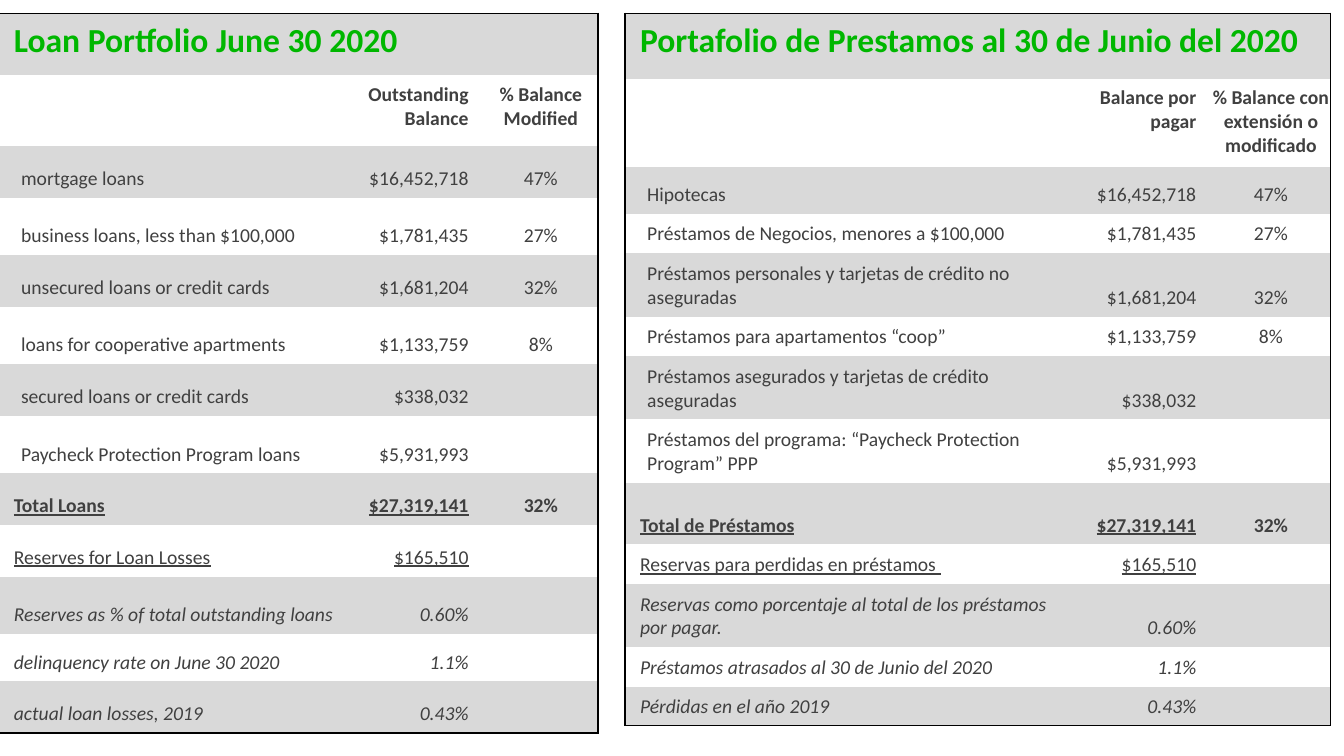
from lxml import etree
from pptx import Presentation
from pptx.dml.color import RGBColor
from pptx.enum.text import MSO_ANCHOR, PP_ALIGN
from pptx.oxml.ns import qn
from pptx.util import Cm, Pt

TOP, BOTTOM = MSO_ANCHOR.TOP, MSO_ANCHOR.BOTTOM
ALIGNS = (PP_ALIGN.LEFT, PP_ALIGN.RIGHT, PP_ALIGN.CENTER)
COLORS = {"title": "00B700", "text": "404040", "band": "D9D9D9", "line": "000000"}
FONT = "Calibri"
PLAIN = "{2D5ABB26-0587-4C30-8999-92F81FD0307C}"
LOANS = range(2, 8)
TOTAL, RESERVE = 8, 9

SUMS = ["$16,452,718", "$1,781,435", "$1,681,204", "$1,133,759", "$338,032",
        "$5,931,993", "$27,319,141", "$165,510", "0.60%", "1.1%", "0.43%"]
SHARES = ["47%", "27%", "32%", "8%", "", "", "32%", "", "", "", ""]

ENGLISH = {
    "box": (-0.03, 0.33),
    "cols": (8.59, 3.28, 3.23),
    "rows": (1.57, 1.78, 1.3, 1.45, 1.3, 1.45, 1.3, 1.45, 1.3, 1.3, 1.45, 1.19, 1.3),
    "title": "Loan Portfolio June 30 2020",
    "heads": ("", "Outstanding Balance", "% Balance Modified"),
    "labels": (
        "mortgage loans",
        "business loans, less than $100,000",
        "unsecured loans or credit cards",
        "loans for cooperative apartments",
        "secured loans or credit cards",
        "Paycheck Protection Program loans",
        "Total Loans",
        "Reserves for Loan Losses",
        "Reserves as % of total outstanding loans",
        "delinquency rate on June 30 2020",
        "actual loan losses, 2019",
    ),
}
SPANISH = {
    "box": (15.75, 0.33),
    "cols": (10.87, 3.56, 3.35),
    "rows": (1.65, 2.24, 1.17, 0.99, 1.6, 0.99, 1.6, 1.6, 1.55, 0.99, 1.6, 0.99, 0.99),
    "title": "Portafolio de Prestamos al 30 de Junio del 2020",
    "heads": ("", "Balance por pagar", "% Balance con extensión o modificado"),
    "labels": (
        "Hipotecas",
        "Préstamos de Negocios, menores a $100,000",
        "Préstamos personales y tarjetas de crédito no aseguradas",
        "Préstamos para apartamentos “coop”",
        "Préstamos asegurados y tarjetas de crédito aseguradas",
        "Préstamos del programa: “Paycheck Protection Program” PPP",
        "Total de Préstamos",
        "Reservas para perdidas en préstamos ",
        "Reservas como porcentaje al total de los préstamos por pagar.",
        "Préstamos atrasados al 30 de Junio del 2020",
        "Pérdidas en el año 2019",
    ),
}


def add_edge(cell, side):
    line = etree.SubElement(cell._tc.get_or_add_tcPr(), qn("a:ln" + side), w=str(Pt(1)))
    fill = etree.SubElement(line, qn("a:solidFill"))
    etree.SubElement(fill, qn("a:srgbClr"), val=COLORS["line"])


def style_cell(cell, row, col, last):
    edges = {"L": col == 0, "R": col == 2 or row == 0, "T": row == 0, "B": row == last}
    for side, drawn in edges.items():
        if drawn:
            add_edge(cell, side)
    if row % 2 == 0:
        cell.fill.solid()
        cell.fill.fore_color.rgb = RGBColor.from_string(COLORS["band"])
    else:
        cell.fill.background()
    cell.margin_left, cell.margin_right = Cm(0.38), Cm(0.03)
    cell.margin_top = cell.margin_bottom = Cm(0.18)
    cell.vertical_anchor = TOP if row < 2 else BOTTOM


def fill_cell(cell, text, row, col):
    para = cell.text_frame.paragraphs[0]
    para.text = text
    para.alignment = ALIGNS[col]
    if row in LOANS and col == 0:
        para._p.get_or_add_pPr().set("marL", str(Cm(0.18)))
    if not text:
        para._p.get_or_add_endParaRPr().set("sz", "1400")
    for run in para.runs:
        font = run.font
        font.name = FONT
        font.size = Pt(24 if row == 0 else 14)
        font.bold = row < 2 or row == TOTAL
        font.italic = row > RESERVE
        font.underline = row in (TOTAL, RESERVE) and col < 2
        font.color.rgb = RGBColor.from_string(COLORS["text" if row else "title"])


def add_loans(slide, data):
    left, top = data["box"]
    cols, rows = data["cols"], data["rows"]
    frame = slide.shapes.add_table(len(rows), len(cols), Cm(left), Cm(top),
                                   Cm(sum(cols)), Cm(sum(rows)))
    table = frame.table
    table.first_row = table.horz_banding = False
    table._tbl.tblPr.find(qn("a:tableStyleId")).text = PLAIN
    for col, width in enumerate(cols):
        table.columns[col].width = Cm(width)
    for row, height in enumerate(rows):
        table.rows[row].height = Cm(height)

    lines = [(data["title"], "", ""), data["heads"], *zip(data["labels"], SUMS, SHARES)]
    for row, line in enumerate(lines):
        for col, text in enumerate(line):
            cell = table.cell(row, col)
            style_cell(cell, row, col, len(rows) - 1)
            fill_cell(cell, text, row, col)
    table.cell(0, 0).merge(table.cell(0, 2))


def main():
    deck = Presentation()
    deck.slide_width, deck.slide_height = Cm(33.87), Cm(19.05)
    slide = deck.slides.add_slide(deck.slide_layouts[6])
    for data in (ENGLISH, SPANISH):
        add_loans(slide, data)
    deck.save("out.pptx")


if __name__ == "__main__":
    main()
